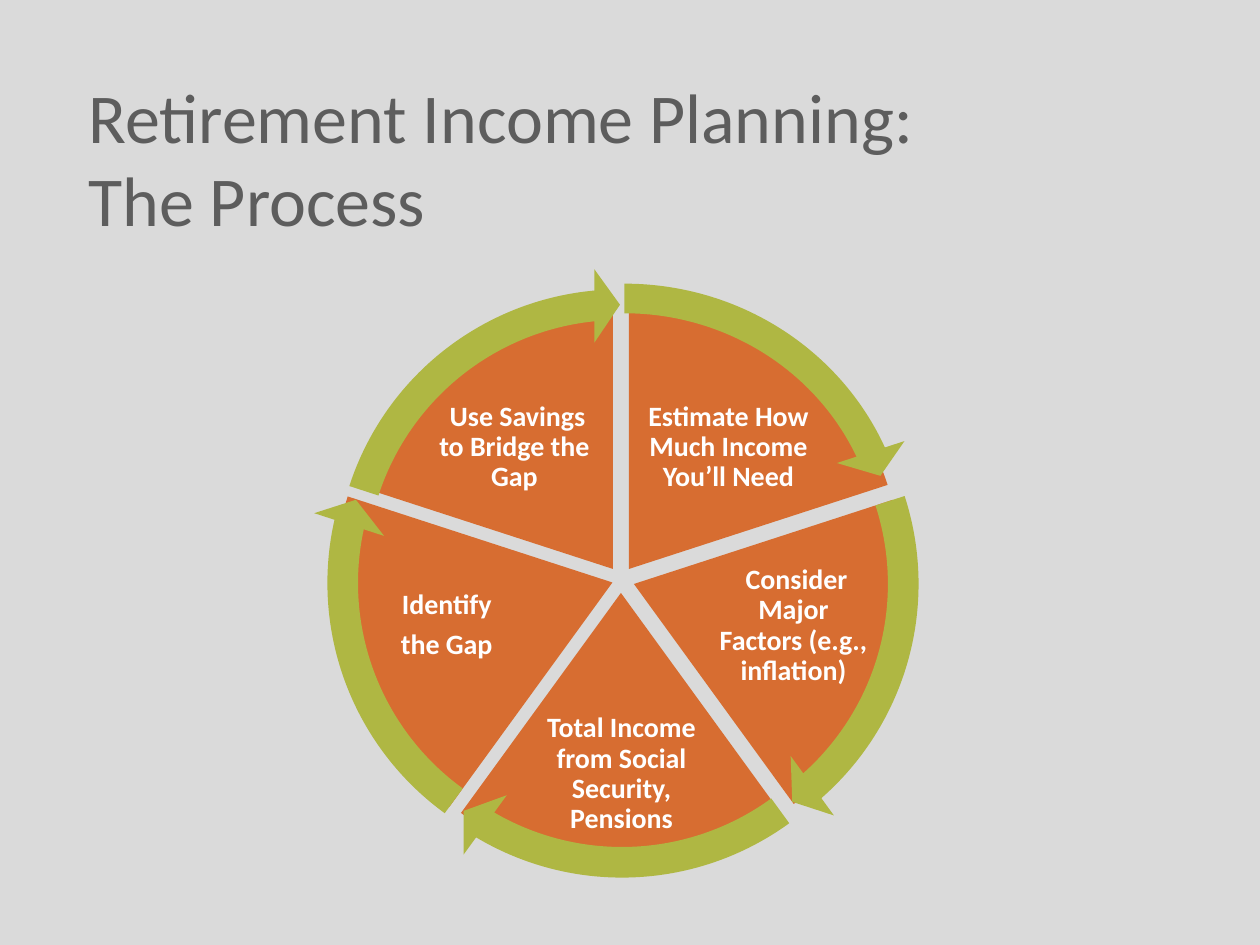
from pptx import Presentation
from pptx.dml.color import RGBColor
from pptx.enum.shapes import MSO_SHAPE
from pptx.enum.text import MSO_ANCHOR, PP_ALIGN
from pptx.util import Emu, Pt

COLORS = {"bg": "DADADA", "title": "5D5D5D", "wedge": "D76D31",
          "arrow": "AFB743", "label": "FFFFFF"}
FONT = "Calibri"

# Preset angles: a full turn is 216, the top of the circle is 162
TURN, TOP = 216, 162
STEP = TURN / 5
ARROW_SWEEP = 39.92


def px(*values):
    return [Emu(round(v * 914400 / 126)) for v in values]


def add_preset(s, kind, box, color, adjustments):
    sp = s.shapes.add_shape(kind, *px(*box))
    sp.shadow.inherit = False
    sp.fill.solid()
    sp.fill.fore_color.rgb = RGBColor.from_string(COLORS[color])
    sp.line.fill.background()
    for i, value in enumerate(adjustments):
        sp.adjustments[i] = value


prs = Presentation()
prs.slide_width, prs.slide_height = px(1260, 945)
s = prs.slides.add_slide(prs.slide_layouts[5])
s.background.fill.solid()
s.background.fill.fore_color.rgb = RGBColor.from_string(COLORS["bg"])

# Title
title = s.shapes.title
title.left, title.top, title.width, title.height = px(76, 73, 1007, 168)
tf = title.text_frame
tf.text = "Retirement Income Planning: \vThe Process"
tf.vertical_anchor = MSO_ANCHOR.MIDDLE
p = tf.paragraphs[0]
p.alignment = PP_ALIGN.LEFT
for r in p.runs:
    r.font.name, r.font.size = FONT, Pt(40)
    r.font.color.rgb = RGBColor.from_string(COLORS["title"])

# Steps, clockwise from the top: wedge box, label box, arrow box, label
steps = [
    ((357, 297, 544, 544), (641, 389, 175, 117), (319, 263, 611, 592),
     "Estimate How Much Income You’ll Need"),
    ((362, 312, 544, 544), (712, 561, 163, 130), (328, 278, 612, 612),
     " Consider Major Factors (e.g., inflation)"),
    ((349, 321, 544, 544), (544, 703, 155, 142), (316, 287, 612, 612),
     "Total Income from Social Security, Pensions"),
    ((334, 306, 557, 553), (367, 559, 166, 132), (306, 277, 612, 612),
     "Identify \nthe Gap "),
    ((341, 297, 544, 544), (427, 389, 175, 117), (314, 268, 612, 612),
     " Use Savings to Bridge the Gap"),
]
starts = [(TOP + i * STEP) % TURN for i in range(len(steps))]

# Wedges with their labels
for start, (wedge, label, _, text) in zip(starts, steps):
    add_preset(s, MSO_SHAPE.PIE, wedge, "wedge", [start, (start + STEP) % TURN])
    tf = s.shapes.add_textbox(*px(*label)).text_frame
    tf.word_wrap = True
    tf.vertical_anchor = MSO_ANCHOR.MIDDLE
    tf.margin_left, tf.margin_top, tf.margin_right, tf.margin_bottom = px(3, 3, 3, 3)
    tf.text = text
    for p in tf.paragraphs:
        p.alignment = PP_ALIGN.CENTER
        p.line_spacing = 0.9
        p.space_after = Pt(5.6)
        for r in p.runs:
            r.font.name, r.font.size, r.font.bold = FONT, Pt(16), True
            r.font.color.rgb = RGBColor.from_string(COLORS["label"])

# Arrows around the rim
for start, (_, _, arrow, _) in zip(starts, steps):
    end = (start + ARROW_SWEEP) % TURN
    add_preset(s, MSO_SHAPE.CIRCULAR_ARROW, arrow, "arrow",
               [0.05, 3.28, end, start, 0.06])

prs.save("out.pptx")
